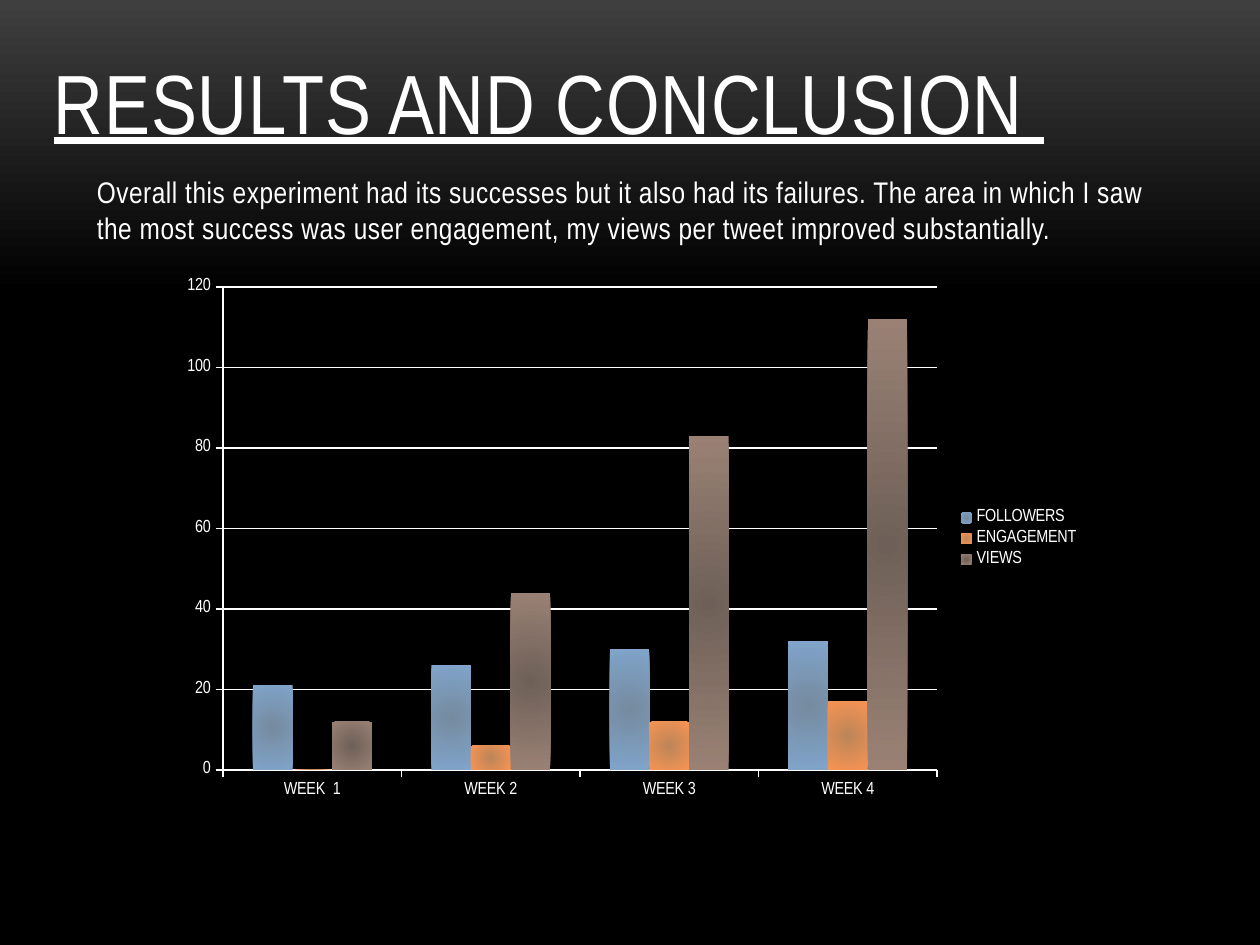
from lxml.etree import SubElement
from pptx import Presentation
from pptx.chart.data import CategoryChartData
from pptx.dml.color import RGBColor
from pptx.enum.chart import XL_CHART_TYPE, XL_LEGEND_POSITION, XL_TICK_MARK
from pptx.enum.text import MSO_ANCHOR
from pptx.oxml.ns import qn
from pptx.util import Inches, Pt

FONT = "Arial Narrow"
WHITE = "FFFFFF"
TITLE = "RESULTS AND CONCLUSION "
BODY = ("Overall this experiment had its successes but it also had its failures. "
        "The area in which I saw the most success was user engagement, "
        "my views per tweet improved substantially.")
WEEKS = ["WEEK  1", "WEEK 2", "WEEK 3", "WEEK 4"]
# name, values, centre colour, edge colour
SERIES = [
    ("FOLLOWERS", (21, 26, 30, 32), "758B9F", "80A4CB"),
    ("ENGAGEMENT", (0, 6, 12, 17), "BD8558", "F79454"),
    ("VIEWS", (12, 44, 83, 112), "6E6058", "9A8174"),
]


def rgb(value):
    return RGBColor.from_string(value)


def box(*lengths):
    return [Inches(n) for n in lengths]


def set_font(font, size):
    font.name = FONT
    font.size = Pt(size)
    font.color.rgb = rgb(WHITE)


def add_text(slide, text, at, size, spacing=0, underline=None, anchor=MSO_ANCHOR.TOP):
    """Add a one-paragraph text box; spacing is between letters, in points."""
    tf = slide.shapes.add_textbox(*box(*at)).text_frame
    tf.word_wrap = True
    tf.vertical_anchor = anchor
    r = tf.paragraphs[0].add_run()
    r.text = text
    set_font(r.font, size)
    r.font.underline = underline
    r.font._element.set("spc", str(round(spacing * 100)))


def set_gradient(fill, first, last, end=1.0):
    fill.gradient()
    for stop, color, position in zip(fill.gradient_stops, (first, last), (0, end)):
        stop.color.rgb = rgb(color)
        stop.position = position


def make_radial(properties):
    """Turn the linear gradient of a series into one that spreads from its centre."""
    grad = properties.find(qn("a:gradFill"))
    grad.remove(grad.find(qn("a:lin")))
    circle = SubElement(grad, qn("a:path"), path="circle")
    SubElement(circle, qn("a:fillToRect"), l="50000", t="50000", r="50000", b="50000")


def add_results_chart(slide, at):
    data = CategoryChartData()
    data.categories = WEEKS
    for name, values, _, _ in SERIES:
        data.add_series(name, values)
    chart = slide.shapes.add_chart(
        XL_CHART_TYPE.COLUMN_CLUSTERED, *box(*at), data).chart
    set_font(chart.font, 10)
    chart.has_title = False
    chart.has_legend = True
    chart.legend.position = XL_LEGEND_POSITION.RIGHT
    chart.legend.include_in_layout = False

    value_axis = chart.value_axis
    value_axis.minimum_scale, value_axis.maximum_scale = 0, 120
    value_axis.major_unit = 20
    value_axis.has_major_gridlines = True
    axes = (chart.category_axis, value_axis)
    for axis in axes:
        axis.major_tick_mark = XL_TICK_MARK.OUTSIDE
    for part in (*axes, value_axis.major_gridlines):
        part.format.line.color.rgb = rgb(WHITE)
        part.format.line.width = Pt(0.75)

    plot = chart.plots[0]
    plot.gap_width = 150
    plot.overlap = 0
    plot.vary_by_categories = False
    for series, (_, _, centre, edge) in zip(plot.series, SERIES):
        set_gradient(series.format.fill, centre, edge)
        make_radial(series._element.find(qn("c:spPr")))


def main():
    prs = Presentation()
    prs.slide_width, prs.slide_height = box(10, 7.5)
    s = prs.slides.add_slide(prs.slide_layouts[6])
    background = s.background.fill
    set_gradient(background, "3F3F3F", "000000", end=0.31)
    background.gradient_angle = 270

    add_text(s, TITLE, (0.33, 0, 8.67, 1.25), 48, spacing=0.5,
             underline=True, anchor=MSO_ANCHOR.BOTTOM)
    add_text(s, BODY, (0.67, 1.33, 8.67, 0.99), 17, spacing=0.3)
    add_results_chart(s, (1.34, 2.13, 7.33, 4.29))
    prs.save("out.pptx")


if __name__ == "__main__":
    main()
